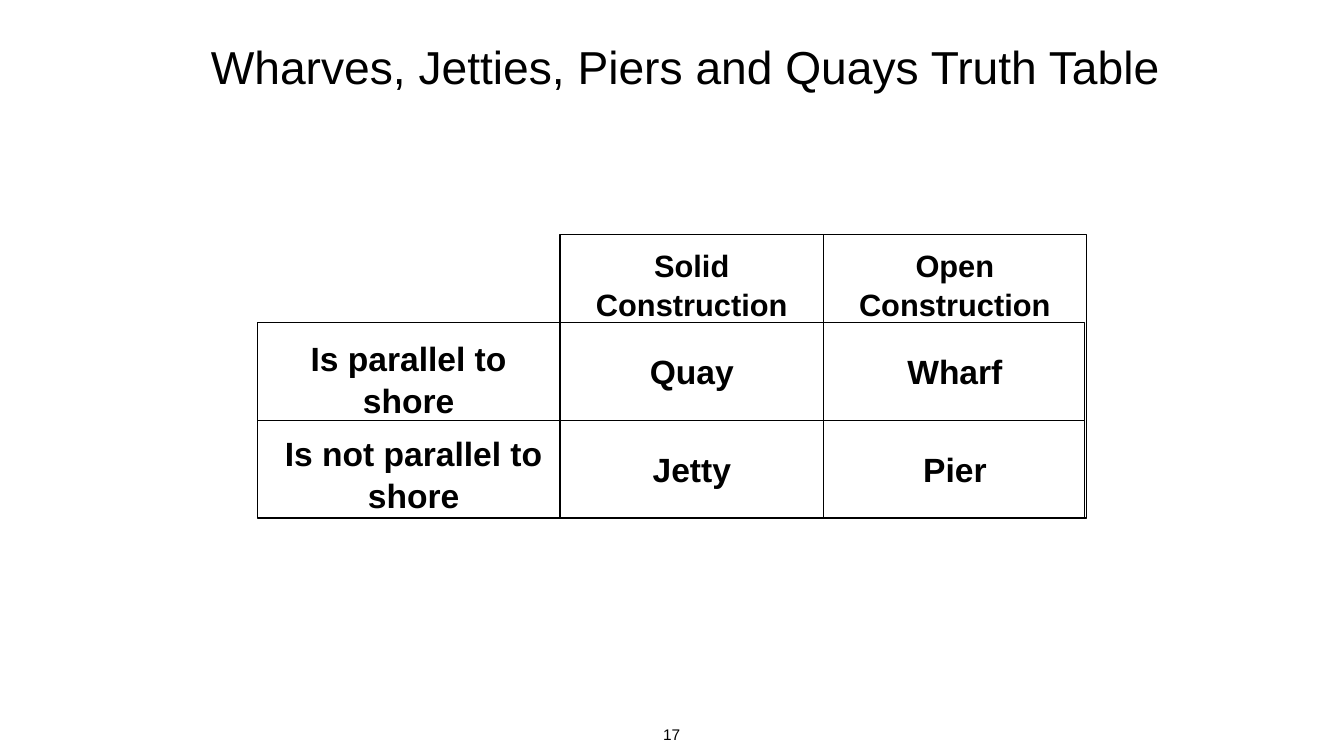
from pptx import Presentation
from pptx.dml.color import RGBColor
from pptx.enum import shapes, text
from pptx.util import Cm, Pt

BLACK = RGBColor(0, 0, 0)
WHITE = RGBColor(255, 255, 255)

COLUMN_LEFT, COLUMN_TOP, COLUMN_WIDTH, COLUMN_HEIGHT = 28.24, 11.81, 13.26, 14.3
ROW_LEFT, ROW_TOP, ROW_WIDTH, ROW_HEIGHT = 12.98, 16.26, 41.68, 4.93
HEADER_WIDTH, ANSWER_WIDTH = 10.77, 7.19

COLUMNS = ["Solid Construction", "Open Construction"]
# label, its left, top and width, then the answer for each column
ROWS = [
    ("Is parallel to shore", 13.84, 16.79, 13.51, ["Quay", "Wharf"]),
    ("Is not parallel to shore", 13.08, 21.59, 15.54, ["Jetty", "Pier"]),
]


class SlideBuilder:
    font = "Arial"
    color = BLACK
    line_width = Pt(2.25)
    padding = Cm(0.2)

    def __init__(self, slide):
        self.slide = slide

    def set_text(self, frame, words, size, bold=False):
        frame.text = words
        para = frame.paragraphs[0]
        para.alignment = text.PP_ALIGN.CENTER
        para.font.name = self.font
        para.font.size = Pt(size)
        para.font.bold = bold
        para.font.color.rgb = self.color
        return para

    def pad(self, frame):
        frame.margin_left = frame.margin_right = self.padding
        frame.margin_top = frame.margin_bottom = self.padding

    def title(self, words, left, top, width, height):
        title = self.slide.shapes.title
        title.left, title.top = Cm(left), Cm(top)
        title.width, title.height = Cm(width), Cm(height)
        frame = title.text_frame
        frame.vertical_anchor = text.MSO_ANCHOR.MIDDLE
        self.pad(frame)
        self.set_text(frame, words, 66)

    def outline(self, left, top, width, height):
        box = self.slide.shapes.add_shape(
            shapes.MSO_SHAPE.RECTANGLE, Cm(left), Cm(top), Cm(width), Cm(height))
        box.shadow.inherit = False
        box.fill.background()
        box.line.color.rgb = self.color
        box.line.width = self.line_width

    def text_box(self, left, top, width, height, wrap):
        box = self.slide.shapes.add_textbox(Cm(left), Cm(top), Cm(width), Cm(height))
        frame = box.text_frame
        frame.word_wrap = wrap
        frame.auto_size = text.MSO_AUTO_SIZE.SHAPE_TO_FIT_TEXT
        return frame

    def label(self, words, left, top, width, height, size=48):
        frame = self.text_box(left, top, width, height, wrap=True)
        self.set_text(frame, words, size, bold=True).line_spacing = 1.05

    def page_number(self, words, left, top, width, height):
        frame = self.text_box(left, top, width, height, wrap=False)
        self.pad(frame)
        self.set_text(frame, words, 22)


def main():
    deck = Presentation()
    deck.slide_width, deck.slide_height = Cm(67.74), Cm(38.1)
    slide = deck.slides.add_slide(deck.slide_layouts[5])
    slide.background.fill.solid()
    slide.background.fill.fore_color.rgb = WHITE
    builder = SlideBuilder(slide)

    builder.title("Wharves, Jetties, Piers and Quays Truth Table", 6.91, 0, 55.27, 6.63)

    column_lefts = [COLUMN_LEFT + i * COLUMN_WIDTH for i in range(len(COLUMNS))]
    for header, left in zip(COLUMNS, column_lefts):
        builder.outline(left, COLUMN_TOP, COLUMN_WIDTH, COLUMN_HEIGHT)
        builder.label(header, left + (COLUMN_WIDTH - HEADER_WIDTH) / 2,
                      COLUMN_TOP + 0.42, HEADER_WIDTH, 4.01, size=44)

    for i, (label, label_left, label_top, label_width, answers) in enumerate(ROWS):
        top = ROW_TOP + i * ROW_HEIGHT
        builder.outline(ROW_LEFT, top, ROW_WIDTH, ROW_HEIGHT)
        builder.label(label, label_left, label_top, label_width, 4.37)
        for answer, left in zip(answers, column_lefts):
            builder.label(answer, left + (COLUMN_WIDTH - ANSWER_WIDTH) / 2,
                          top + 1.22, ANSWER_WIDTH, 2.31)

    builder.page_number("17", 33.17, 36.32, 1.37, 1.35)
    deck.save("out.pptx")


if __name__ == "__main__":
    main()
